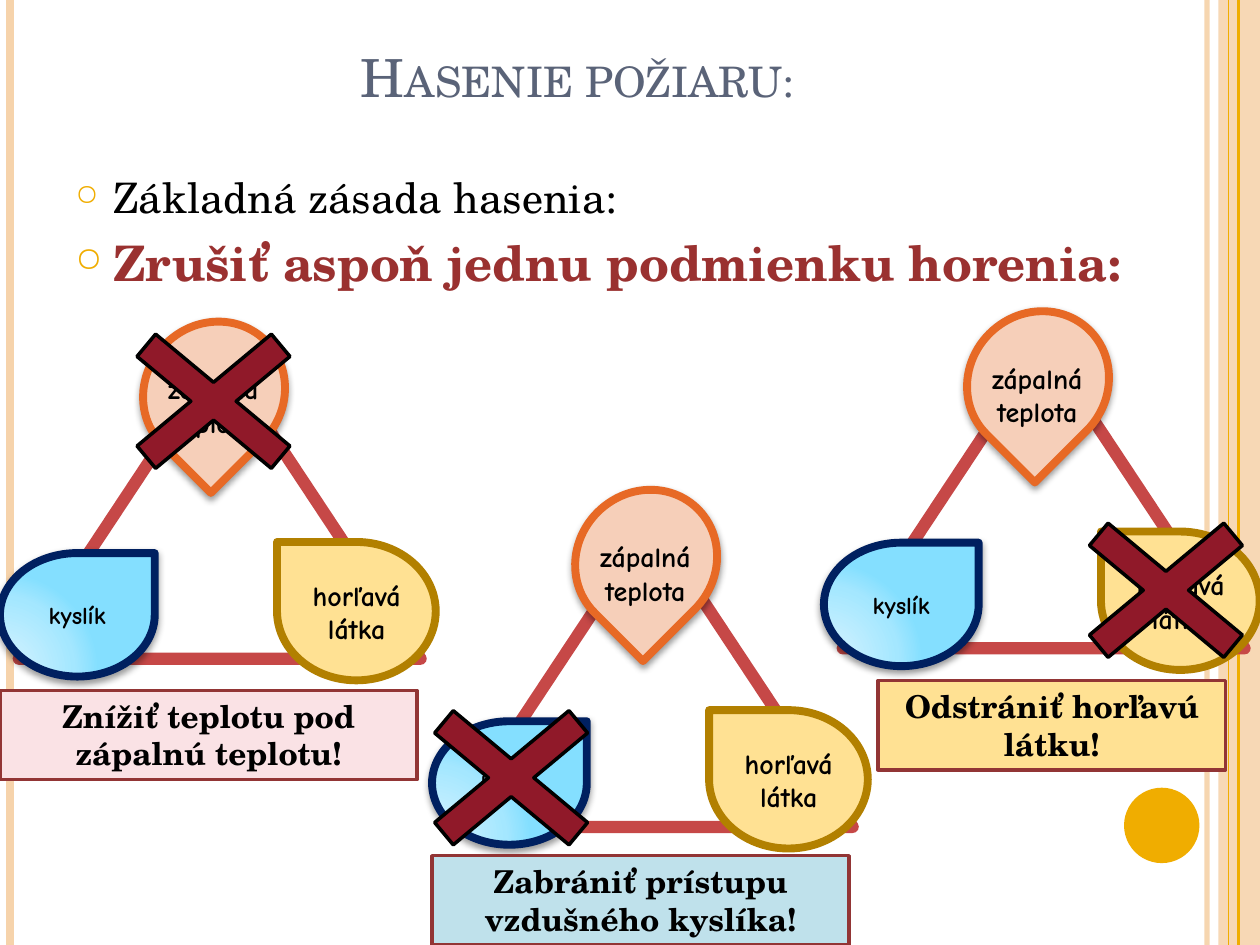
"""Build a slide on the three ways of putting out a fire."""
from lxml.etree import SubElement
from pptx import Presentation
from pptx.dml.color import RGBColor
from pptx.enum.shapes import MSO_CONNECTOR, MSO_SHAPE
from pptx.enum.text import MSO_ANCHOR, PP_ALIGN
from pptx.oxml import parse_xml
from pptx.oxml.ns import nsdecls, qn
from pptx.util import Cm, Pt

BLACK = RGBColor(0x00, 0x00, 0x00)
AMBER = RGBColor(0xF0, 0xAD, 0x00)
PEACH = RGBColor(0xF6, 0xD3, 0xAB)
SLATE = RGBColor(0x5A, 0x63, 0x78)
BRICK = RGBColor(0x9A, 0x31, 0x30)
TRIANGLE_RED = RGBColor(0xC6, 0x48, 0x47)
CROSS_RED = RGBColor(0x90, 0x19, 0x29)
LABEL_EDGE = RGBColor(0x92, 0x35, 0x35)
NAVY = RGBColor(0x00, 0x20, 0x60)
ORANGE = RGBColor(0xE7, 0x69, 0x25)
SALMON = RGBColor(0xF6, 0xCF, 0xB9)
OCHRE = RGBColor(0xB2, 0x80, 0x00)
YELLOW = RGBColor(0xFF, 0xE1, 0x93)
PINK = RGBColor(0xFA, 0xE2, 0xE5)
PALE_BLUE = RGBColor(0xBF, 0xE1, 0xEB)
OXYGEN_STOPS = [
    (0, RGBColor(0xC8, 0xF0, 0xFF)),
    (30, RGBColor(0xC3, 0xEE, 0xFF)),
    (75, RGBColor(0xA4, 0xE7, 0xFF)),
    (100, RGBColor(0x84, 0xDF, 0xFF)),
]
SERIF = "TeX Gyre Schola"
COMIC = "Comic Neue"


def add_figure(shapes, preset, box, fill=None, edge=None, width=0, shadow=False):
    figure = shapes.add_shape(preset, *map(Cm, box))
    figure.shadow.inherit = False
    if fill is None:
        figure.fill.background()
    else:
        figure.fill.solid()
        figure.fill.fore_color.rgb = fill
    if edge is None:
        figure.line.fill.background()
    else:
        figure.line.color.rgb = edge
        figure.line.width = Pt(width)
    if shadow:
        effects = figure._element.spPr.find(qn("a:effectLst"))
        effects.append(parse_xml(
            f'<a:outerShdw {nsdecls("a")} blurRad="{Pt(4)}" dist="{Pt(2)}" dir="5400000" '
            'rotWithShape="0"><a:srgbClr val="000000"><a:alpha val="40000"/>'
            '</a:srgbClr></a:outerShdw>'))
    return figure


def write(frame, paragraph, text, size, font, color=BLACK, bold=True,
          anchor=MSO_ANCHOR.TOP, align=PP_ALIGN.CENTER):
    frame.word_wrap = True
    frame.vertical_anchor = anchor
    paragraph.alignment = align
    run = paragraph.add_run()
    run.text = text
    run.font.size = Pt(size)
    run.font.name = font
    run.font.bold = bold
    run.font.color.rgb = color
    return run


presentation = Presentation()
presentation.slide_width = Cm(25.4)
presentation.slide_height = Cm(19.05)
slide = presentation.slides.add_slide(presentation.slide_layouts[6])

side_band = add_figure(slide.shapes, MSO_SHAPE.RECTANGLE, (24.56, 0, 0.84, 19.05), PEACH)
band_color = side_band._element.spPr.find(qn("a:solidFill"))[0]
SubElement(band_color, qn("a:alpha"), val="87000")
for x, color, width, opacity in [
    (24.33, PEACH, 3, 93),
    (0.2, PEACH, 4.5, 100),
    (24.97, AMBER, 1.5, 100),
    (24.77, AMBER, 0.75, 100),
]:
    stripe = slide.shapes.add_connector(MSO_CONNECTOR.STRAIGHT, Cm(x), 0, Cm(x), Cm(19.05))
    stripe.line.color.rgb = color
    stripe.line.width = Pt(width)
    stripe_properties = stripe._element.spPr
    stripe_color = stripe_properties.find(".//" + qn("a:srgbClr"))
    SubElement(stripe_color, qn("a:alpha"), val=str(opacity * 1000))
    SubElement(stripe_properties, qn("a:effectLst"))
add_figure(slide.shapes, MSO_SHAPE.OVAL, (22.66, 15.88, 1.52, 1.52), AMBER)

title = slide.shapes.add_textbox(Cm(1.27), Cm(0.76), Cm(20.75), Cm(1.55)).text_frame
heading = write(title, title.paragraphs[0], "Hasenie požiaru:", 30, SERIF, SLATE, False,
                MSO_ANCHOR.BOTTOM)
heading.font._element.set("cap", "small")

principle = slide.shapes.add_textbox(Cm(1.27), Cm(3.33), Cm(23.62), Cm(14.66)).text_frame
for index, (text, size, color, bold) in enumerate([
    ("Základná zásada hasenia:", 24, BLACK, False),
    ("Zrušiť aspoň jednu podmienku horenia:", 28, BRICK, True),
]):
    point = principle.add_paragraph() if index else principle.paragraphs[0]
    write(principle, point, text, size, SERIF, color, bold, align=PP_ALIGN.LEFT)
    point.space_before = Pt(6)
    properties = point._p.get_or_add_pPr()
    properties.set("marL", str(Cm(0.76)))
    properties.set("indent", str(Cm(-0.76)))
    SubElement(SubElement(properties, qn("a:buClr")), qn("a:srgbClr"), val=str(AMBER))
    SubElement(properties, qn("a:buSzPct"), val="70000")
    SubElement(properties, qn("a:buChar"), char="○")

stops = "".join(f'<a:gs pos="{position * 1000}"><a:srgbClr val="{color}"/></a:gs>'
                for position, color in OXYGEN_STOPS)
oxygen_gradient = (
    f'<a:gradFill {nsdecls("a")} rotWithShape="1"><a:gsLst>{stops}</a:gsLst><a:path path="circle">'
    '<a:fillToRect l="5000" t="100000" r="120000" b="10000"/></a:path></a:gradFill>')

for left, top, cross_at, label_box, label_fill, measure in [
    (0, 6.53, (1.7, 5.92), (0, 13.92, 8.41, 1.8), PINK,
     "Znížiť teplotu pod zápalnú teplotu!"),
    (8.71, 9.92, (7.7, 13.51), (8.71, 17.25, 8.41, 1.8), PALE_BLUE,
     "Zabrániť prístupu vzdušného kyslíka!"),
    (16.61, 6.32, (20.9, 9.73), (17.7, 13.72, 7.01, 1.8), YELLOW,
     "Odstrániť horľavú látku!"),
]:
    fire = slide.shapes.add_group_shape().shapes
    add_figure(fire, MSO_SHAPE.ISOSCELES_TRIANGLE, (left + 0.38, top + 0.63, 8.1, 6.12),
               edge=TRIANGLE_RED, width=7)

    oxygen = add_figure(fire, MSO_SHAPE.TEAR, (left, top + 4.62, 3.12, 2.49),
                        edge=NAVY, width=4.5, shadow=True)
    oxygen_properties = oxygen._element.spPr
    oxygen_properties.replace(oxygen_properties.find(qn("a:noFill")), parse_xml(oxygen_gradient))
    write(oxygen.text_frame, oxygen.text_frame.paragraphs[0], "kyslík", 14, COMIC,
          anchor=MSO_ANCHOR.MIDDLE)

    for drop, angle, fill, edge, shadow, caption_box, condition in [
        ((2.84, 0, 2.95, 2.77), 135, SALMON, ORANGE, True,
         (2.74, 0.84, 3.12, 1.52), "zápalná teplota"),
        ((5.79, 4.19, 2.79, 3.2), 270, YELLOW, OCHRE, False,
         (5.59, 5, 3.2, 1.63), "horľavá látka"),
    ]:
        x, y, width, height = drop
        add_figure(fire, MSO_SHAPE.TEAR, (left + x, top + y, width, height),
                   fill, edge, 4.5, shadow).rotation = angle
        x, y, width, height = caption_box
        caption = fire.add_textbox(Cm(left + x), Cm(top + y), Cm(width), Cm(height)).text_frame
        write(caption, caption.paragraphs[0], condition, 16, COMIC)

    cross = add_figure(slide.shapes, MSO_SHAPE.MATH_MULTIPLY, (*cross_at, 5.21, 4.34),
                       CROSS_RED, BLACK, 2)
    cross.adjustments[0] = 0.135
    label = add_figure(slide.shapes, MSO_SHAPE.RECTANGLE, label_box, label_fill, LABEL_EDGE, 2)
    write(label.text_frame, label.text_frame.paragraphs[0], measure, 18, SERIF)

presentation.save("out.pptx")
